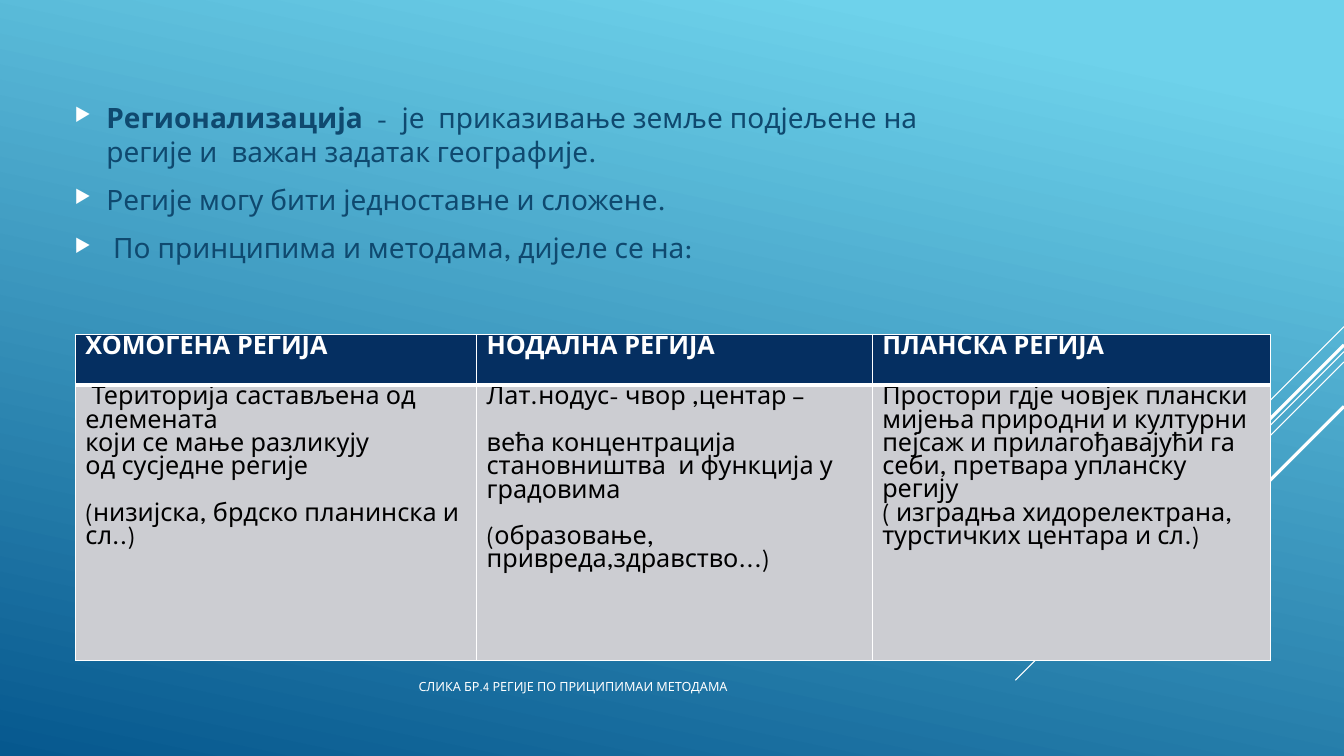
from lxml.etree import SubElement
from pptx import Presentation
from pptx.dml.color import RGBColor
from pptx.enum.shapes import MSO_CONNECTOR
from pptx.enum.text import MSO_ANCHOR
from pptx.oxml.ns import qn
from pptx.util import Cm, Pt

WIDTH, HEIGHT = 33.87, 19.05
WHITE, NAVY, GREY, BLACK, BLUE = "FFFFFF", "052F61", "CCCDD2", "000000", "0F496F"

# Diagonal rays from the right edge: start height, reach, weight
RAYS = [(8.23, 2.54, 0.75), (8.86, 8.28, 0.75), (9.12, 5.27, 0.75),
        (8.69, 4.85, 2.25), (10.24, 3.53, 2.25)]

# Each paragraph is a list of (text, bold) runs
POINTS = [
    [("Регионализација", True),
     ("  -  је  приказивање земље подјељене на регије и  важан задатак географије.", False)],
    [("Регије могу бити једноставне и сложене.", False)],
    [(" По принципима и методама, дијеле се на:", False)],
]

# Each region: heading, then blocks of lines set apart by a gap
REGIONS = [
    ("ХОМОГЕНА РЕГИЈА", [
        [" Територија састављена од елемената", "који се мање разликују",
         "од сусједне регије"],
        ["(низијска, брдско планинска и сл..)"]]),
    ("НОДАЛНА РЕГИЈА", [
        ["Лат.нодус- чвор ,центар –"],
        ["већа концентрација становништва  и функција у градовима"],
        ["(образовање, привреда,здравство...)"]]),
    ("ПЛАНСКА РЕГИЈА", [
        ["Простори гдје човјек плански мијења природни и културни пејсаж "
         "и прилагођавајући га себи, претвара упланску регију",
         "( изградња хидорелектрана, турстичких центара и сл.)"]]),
]


def rgb(value):
    return RGBColor.from_string(value)


class SlideBuilder:
    font = "League Spartan"
    block_gap = 16.7

    def __init__(self, slide):
        self.slide = slide

    def background(self, top, bottom):
        fill = self.slide.background.fill
        fill.gradient()
        fill.gradient_angle = 258
        for stop, color, position in zip(fill.gradient_stops, (top, bottom), (0.1, 1)):
            stop.color.rgb = rgb(color)
            stop.position = position

    def style(self, paragraph, size, color, bold=None):
        font = paragraph.font
        font.name, font.size, font.bold = self.font, Pt(size), bold
        font.color.rgb = rgb(color)

    def ray(self, top, reach, weight):
        """Draw a 45° line from the right edge down to the left."""
        line = self.slide.shapes.add_connector(
            MSO_CONNECTOR.STRAIGHT, Cm(WIDTH), Cm(top), Cm(WIDTH - reach), Cm(top + reach))
        line.line.color.rgb = rgb(WHITE)
        line.line.width = Pt(weight)
        SubElement(line._element.spPr, qn("a:effectLst"))

    def text_frame(self, left, top, width, height, anchor):
        box = self.slide.shapes.add_textbox(Cm(left), Cm(top), Cm(width), Cm(height))
        frame = box.text_frame
        frame.word_wrap = True
        frame.vertical_anchor = anchor
        return frame

    def caption(self, text, *place):
        frame = self.text_frame(*place, MSO_ANCHOR.MIDDLE)
        frame.text = text
        self.style(frame.paragraphs[0], 9, WHITE)

    def bullets(self, points, *place):
        frame = self.text_frame(*place, MSO_ANCHOR.TOP)
        frame.margin_top = Cm(1.19)
        frame.margin_right = Cm(0.5)
        for index, runs in enumerate(points):
            paragraph = frame.add_paragraph() if index else frame.paragraphs[0]
            for text, bold in runs:
                run = paragraph.add_run()
                run.text = text
                run.font.bold = bold
            self.style(paragraph, 20, BLUE)
            paragraph.space_after = Pt(10.5)
            self.add_bullet(paragraph)

    def add_bullet(self, paragraph):
        props = paragraph._p.get_or_add_pPr()
        props.set("marL", str(Cm(0.8)))
        props.set("indent", str(-Cm(0.8)))
        # Bullet elements come after spacing and before the default run style
        default_run = props.find(qn("a:defRPr"))
        color = SubElement(props, qn("a:buClr"))
        SubElement(color, qn("a:srgbClr"), val=WHITE)
        SubElement(props, qn("a:buSzPct"), val="66000")
        SubElement(props, qn("a:buChar"), char="▶")
        props.append(default_run)

    def borders(self, cell, **weights):
        props = cell._tc.get_or_add_tcPr()
        fill = props.find(qn("a:solidFill"))
        for side in "LRTB":
            line = SubElement(props, qn(f"a:ln{side}"), w=str(Pt(weights.get(side, 1))))
            SubElement(SubElement(line, qn("a:solidFill")), qn("a:srgbClr"), val=WHITE)
        props.append(fill)

    def cell(self, cell, blocks, fill, color, bold, **weights):
        cell.fill.solid()
        cell.fill.fore_color.rgb = rgb(fill)
        cell.margin_top = Cm(0.06)
        self.borders(cell, **weights)
        frame = cell.text_frame
        frame.text = "\n".join(line for block in blocks for line in block)
        paragraphs = iter(frame.paragraphs)
        for number, block in enumerate(blocks):
            for position, _ in enumerate(block):
                paragraph = next(paragraphs)
                self.style(paragraph, 18, color, bold)
                if number and position == 0:
                    paragraph.space_before = Pt(self.block_gap)

    def region_table(self, regions, left, top, widths, heights):
        table = self.slide.shapes.add_table(
            len(heights), len(widths), Cm(left), Cm(top),
            Cm(sum(widths)), Cm(sum(heights))).table
        for row, height in zip(table.rows, heights):
            row.height = Cm(height)
        for index, (heading, blocks) in enumerate(regions):
            table.columns[index].width = Cm(widths[index])
            self.cell(table.cell(0, index), [[heading]], NAVY, WHITE, True, B=3)
            self.cell(table.cell(1, index), blocks, GREY, BLACK, False, T=3)


def main():
    deck = Presentation()
    deck.slide_width, deck.slide_height = Cm(WIDTH), Cm(HEIGHT)
    builder = SlideBuilder(deck.slides.add_slide(deck.slide_layouts[6]))
    builder.background("6ED2EB", "06588E")
    for ray in RAYS:
        builder.ray(*ray)
    builder.caption("СЛИКА БР.4 РЕГИЈЕ ПО ПРИЦИПИМАИ МЕТОДАМА", 10.3, 17, 10, 0.6)
    builder.bullets(POINTS, 1.63, 1.35, 23.98, 7.54)
    builder.region_table(REGIONS, 1.9, 8.43, [10.11, 9.97, 10.04], [1.27, 6.94])
    deck.save("out.pptx")


if __name__ == "__main__":
    main()
